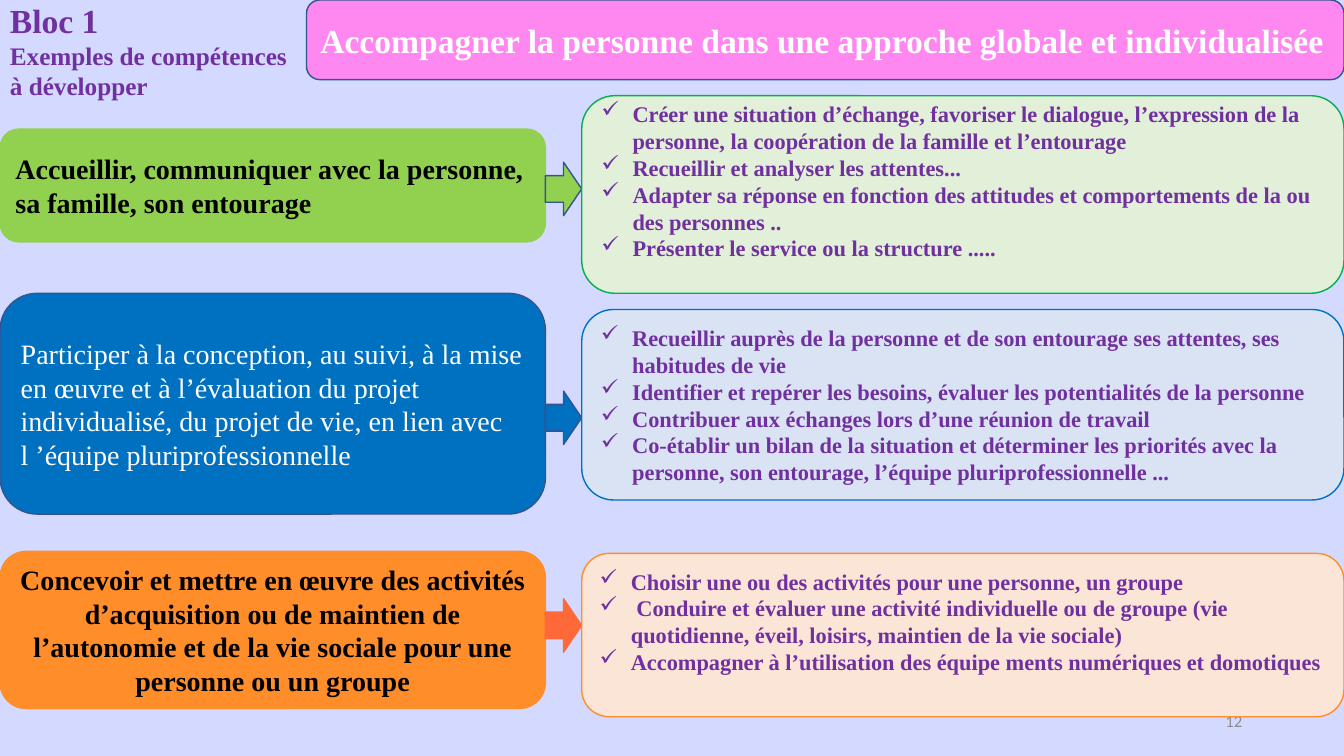
from lxml import etree
from pptx import Presentation
from pptx.dml.color import RGBColor
from pptx.enum.shapes import MSO_SHAPE
from pptx.enum.text import MSO_ANCHOR, PP_ALIGN
from pptx.oxml.ns import qn
from pptx.util import Inches, Pt

ROUNDED = MSO_SHAPE.ROUNDED_RECTANGLE
ARROW = MSO_SHAPE.RIGHT_ARROW
TOP, MIDDLE = MSO_ANCHOR.TOP, MSO_ANCHOR.MIDDLE
LEFT, CENTER, RIGHT = PP_ALIGN.LEFT, PP_ALIGN.CENTER, PP_ALIGN.RIGHT

SLIDE_WIDTH, SLIDE_HEIGHT = 13.33, 7.5
SERIF, SANS = "Times New Roman", "Calibri"
COLORS = {
    "background": "D4DAFF", "purple": "7030A0", "outline": "325491",
    "black": "000000", "white": "FFFFFF", "gray": "8C8C8C", "pink": "FF87F0",
    "green": "92D050", "green edge": "00B050", "pale green": "E2F0D9",
    "blue": "0070C0", "pale blue": "DAE3F3",
    "orange": "FF8D2A", "red orange": "FF6838", "pale orange": "FBE5D6",
}

# Columns: skill boxes, arrows, example boxes
SKILL_WIDTH, ARROW_WIDTH, ARROW_HEIGHT = 5.41, 0.36, 0.53
EXAMPLES_LEFT = SKILL_WIDTH + ARROW_WIDTH
EXAMPLES_WIDTH = SLIDE_WIDTH - EXAMPLES_LEFT
BANNER_LEFT, BANNER_HEIGHT = 3.04, 0.79
BULLET_INDENT = 0.31
INSET = 0.05

# Rows: each "span" is (top, height); "lift" raises the examples in their box
ROWS = [
    {
        "skill": ["Accueillir, communiquer avec la personne, sa famille, son entourage"],
        "skill span": (1.28, 1.12), "skill colors": ("green", "green"),
        "text": ("black", True, LEFT),
        "arrow top": 1.61, "arrow colors": ("green", "outline"),
        "examples": [
            "Créer une situation d’échange, favoriser le dialogue, l’expression de la "
            "personne, la coopération de la famille et l’entourage",
            "Recueillir et analyser les attentes...",
            "Adapter sa réponse en fonction des attitudes et comportements de la ou "
            "des personnes ..",
            "Présenter le service ou la structure .....",
        ],
        "examples span": (0.95, 1.96), "examples colors": ("pale green", "green edge"),
        "lift": 0.27,
    },
    {
        "skill": [
            "Participer à la conception, au suivi, à la mise en œuvre et à l’évaluation "
            "du projet individualisé, du projet de vie, en lien avec",
            "l ’équipe pluriprofessionnelle",
        ],
        "skill span": (2.91, 2.19), "skill colors": ("blue", "outline"),
        "text": ("white", False, LEFT),
        "arrow top": 3.88, "arrow colors": ("blue", "outline"),
        "examples": [
            "Recueillir auprès de la personne et de son entourage ses attentes, ses "
            "habitudes de vie",
            "Identifier et repérer les besoins, évaluer les potentialités de la personne",
            "Contribuer aux échanges lors d’une réunion de travail",
            "Co-établir un bilan de la situation et déterminer les priorités avec la "
            "personne, son entourage, l’équipe pluriprofessionnelle ...",
        ],
        "examples span": (3.07, 1.89), "examples colors": ("pale blue", "blue"),
        "lift": 0,
    },
    {
        "skill": [
            "Concevoir et mettre en œuvre des activités d’acquisition ou de maintien de "
            "l’autonomie et de la vie sociale pour une personne ou un groupe",
        ],
        "skill span": (5.47, 1.56), "skill colors": ("orange", "orange"),
        "text": ("black", True, CENTER),
        "arrow top": 5.94, "arrow colors": ("red orange", "red orange"),
        "examples": [
            "Choisir une ou des activités pour une personne, un groupe",
            " Conduire et évaluer une activité individuelle ou de groupe (vie "
            "quotidienne, éveil, loisirs, maintien de la vie sociale)",
            "Accompagner à l’utilisation des équipe ments numériques et domotiques",
        ],
        "examples span": (5.49, 1.62), "examples colors": ("pale orange", "orange"),
        "lift": 0.27,
    },
]


def color(name):
    return RGBColor.from_string(COLORS[name])


def add_filled_shape(slide, kind, left, top, width, height, colors):
    shape = slide.shapes.add_shape(
        kind, Inches(left), Inches(top), Inches(width), Inches(height))
    fill_name, line_name = colors
    shape.shadow.inherit = False
    shape.fill.solid()
    shape.fill.fore_color.rgb = color(fill_name)
    shape.line.color.rgb = color(line_name)
    shape.line.width = Pt(1)
    return shape


def add_text_box(slide, left, top, width, height):
    return slide.shapes.add_textbox(
        Inches(left), Inches(top), Inches(width), Inches(height))


def set_check_mark(paragraph):
    properties = paragraph._p.get_or_add_pPr()
    properties.set("marL", str(Inches(BULLET_INDENT)))
    properties.set("indent", str(-Inches(BULLET_INDENT)))
    etree.SubElement(properties, qn("a:buChar")).set("char", "✓")


def write(shape, lines, text_color, bold=True, align=LEFT, font=SERIF,
          anchor=MIDDLE, checked=False, top=INSET, bottom=INSET):
    """Write one paragraph for each (text, size) pair."""
    frame = shape.text_frame
    frame.word_wrap = True
    frame.vertical_anchor = anchor
    frame.margin_top, frame.margin_bottom = Inches(top), Inches(bottom)
    for index, (text, size) in enumerate(lines):
        paragraph = frame.add_paragraph() if index else frame.paragraphs[0]
        paragraph.alignment = align
        if checked:
            set_check_mark(paragraph)
        run = paragraph.add_run()
        run.text = text
        run.font.name = font
        run.font.size = Pt(size)
        run.font.bold = bold
        run.font.color.rgb = color(text_color)


def add_row(slide, row):
    # Skill
    top, height = row["skill span"]
    skill = add_filled_shape(
        slide, ROUNDED, 0, top, SKILL_WIDTH, height, row["skill colors"])
    text_color, bold, align = row["text"]
    write(skill, [(text, 20) for text in row["skill"]], text_color, bold, align)

    # Arrow
    add_filled_shape(slide, ARROW, SKILL_WIDTH, row["arrow top"],
                     ARROW_WIDTH, ARROW_HEIGHT, row["arrow colors"])

    # Examples
    top, height = row["examples span"]
    examples = add_filled_shape(slide, ROUNDED, EXAMPLES_LEFT, top,
                                EXAMPLES_WIDTH, height, row["examples colors"])
    write(examples, [(text, 16) for text in row["examples"]], "purple",
          checked=True, bottom=INSET + row["lift"])


def main():
    presentation = Presentation()
    presentation.slide_width = Inches(SLIDE_WIDTH)
    presentation.slide_height = Inches(SLIDE_HEIGHT)
    slide = presentation.slides.add_slide(presentation.slide_layouts[6])
    slide.background.fill.solid()
    slide.background.fill.fore_color.rgb = color("background")

    # Slide number
    number = add_text_box(slide, 9.42, 6.95, 3, 0.4)
    write(number, [("12", 12)], "gray", False, RIGHT, SANS)

    # Heading and banner
    heading = add_text_box(slide, 0, 0, BANNER_LEFT, 1.01)
    write(heading,
          [("Bloc 1", 24), ("Exemples de compétences", 18), ("à développer", 18)],
          "purple", anchor=TOP, top=0, bottom=0)
    banner = add_filled_shape(slide, ROUNDED, BANNER_LEFT, 0,
                              SLIDE_WIDTH - BANNER_LEFT, BANNER_HEIGHT,
                              ("pink", "outline"))
    write(banner,
          [("Accompagner la personne dans une approche globale et individualisée", 24)],
          "white")

    # Skills with their examples
    for row in ROWS:
        add_row(slide, row)

    presentation.save("out.pptx")


if __name__ == "__main__":
    main()
